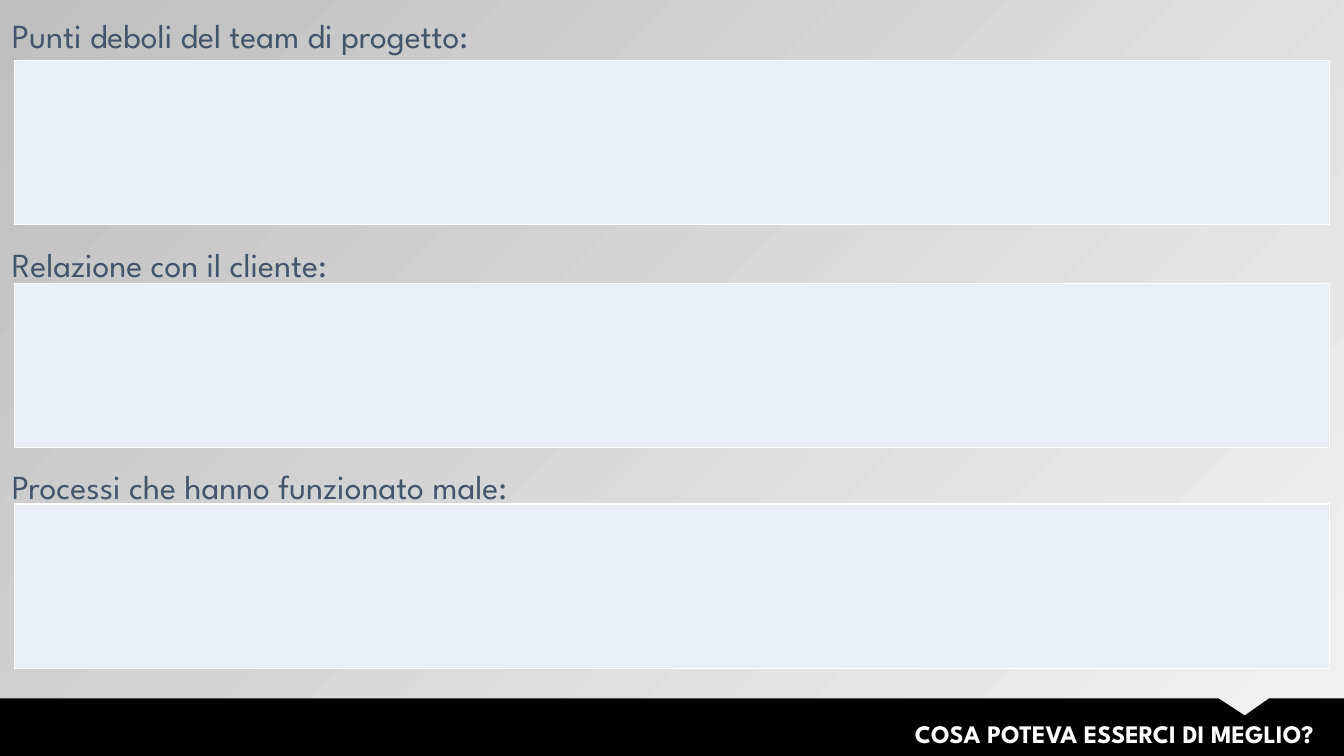
from dataclasses import dataclass

from lxml.etree import SubElement
from pptx import Presentation
from pptx.dml.color import RGBColor
from pptx.enum.text import MSO_AUTO_SIZE, PP_ALIGN
from pptx.oxml.ns import qn
from pptx.util import Cm, Pt


@dataclass(frozen=True)
class Theme:
    """Colours, typeface and type sizes of the slide."""

    font: str = "League Spartan"
    label_size: float = 24
    title_size: float = 18
    label: str = "44546A"
    title: str = "FFFFFF"
    band: str = "000000"
    panel: str = "EAEFF7"
    border: str = "FFFFFF"
    light: str = "F2F2F2"
    dark: str = "BFBFBF"


THEME = Theme()
WIDTH, HEIGHT = 33.87, 19.05
SECTIONS = (
    ("Punti deboli del team di progetto:", 0.48, 1.12, 1.52, Pt(21.5)),
    ("Relazione con il cliente:", 5.79, 1.45, 7.14, 1.2),
    ("Processi che hanno funzionato male:", 11.38, 1.45, 12.7, 1.2),
)


def paint_background(page):
    """Fill the page with a diagonal grey gradient."""
    fill = page.background.fill
    fill.gradient()
    fill.gradient_angle = 135
    for stop, colour in zip(fill.gradient_stops, (THEME.light, THEME.dark)):
        stop.color.rgb = RGBColor.from_string(colour)


def add_band(page):
    """Draw the bottom band with a notch in its top edge."""
    top = 17.6
    corners = ((30.71, top), (31.37, 18.03), (31.98, top),
               (WIDTH, top), (WIDTH, HEIGHT), (0, HEIGHT))
    builder = page.shapes.build_freeform(Cm(0), Cm(top))
    builder.add_line_segments([(Cm(x), Cm(y)) for x, y in corners])
    band = builder.convert_to_shape()
    band.shadow.inherit = False
    band.fill.solid()
    band.fill.fore_color.rgb = RGBColor.from_string(THEME.band)
    band.line.fill.background()


def add_text(page, text, left, top, width, height, size, colour, bold=False):
    """Add a one-line text box and return its frame and paragraph."""
    box = page.shapes.add_textbox(Cm(left), Cm(top), Cm(width), Cm(height))
    frame = box.text_frame
    frame.word_wrap = True
    frame.auto_size = MSO_AUTO_SIZE.SHAPE_TO_FIT_TEXT
    para = frame.paragraphs[0]
    span = para.add_run()
    span.text = text
    span.font.name = THEME.font
    span.font.size = Pt(size)
    span.font.bold = bold
    span.font.color.rgb = RGBColor.from_string(colour)
    return frame, para


def add_title(page, text):
    """Add the right-aligned title on the band."""
    _, para = add_text(page, text, 10.52, 17.98, 23.01, 1.02,
                       THEME.title_size, THEME.title, bold=True)
    para.alignment = PP_ALIGN.RIGHT


def add_label(page, text, top, height, spacing):
    """Add the heading of one section."""
    frame, para = add_text(page, text, 0, top, 19.38, height,
                           THEME.label_size, THEME.label)
    frame.margin_left = frame.margin_right = Cm(0.3)
    frame.margin_top = frame.margin_bottom = Cm(0.15)
    para.line_spacing = spacing
    para.space_before = Pt(THEME.label_size * 0.2)


def add_panel(page, top):
    """Add an empty one-cell table to write in."""
    table = page.shapes.add_table(
        1, 1, Cm(0.36), Cm(top), Cm(33.15), Cm(4.14)).table
    table.first_row = table.horz_banding = False
    cell = table.cell(0, 0)
    properties = cell._tc.get_or_add_tcPr()
    for side in ("a:lnL", "a:lnR", "a:lnT", "a:lnB"):
        line = SubElement(properties, qn(side), w=str(Pt(1)))
        paint = SubElement(line, qn("a:solidFill"))
        SubElement(paint, qn("a:srgbClr"), val=THEME.border)
    cell.fill.solid()
    cell.fill.fore_color.rgb = RGBColor.from_string(THEME.panel)


def main():
    """Build the slide and save the deck."""
    deck = Presentation()
    deck.slide_width, deck.slide_height = Cm(WIDTH), Cm(HEIGHT)
    page = deck.slides.add_slide(deck.slide_layouts[6])
    paint_background(page)
    add_band(page)
    add_title(page, "COSA POTEVA ESSERCI DI MEGLIO? ")
    for text, label_top, label_height, panel_top, spacing in SECTIONS:
        add_panel(page, panel_top)
        add_label(page, text, label_top, label_height, spacing)
    deck.save("out.pptx")


if __name__ == "__main__":
    main()
